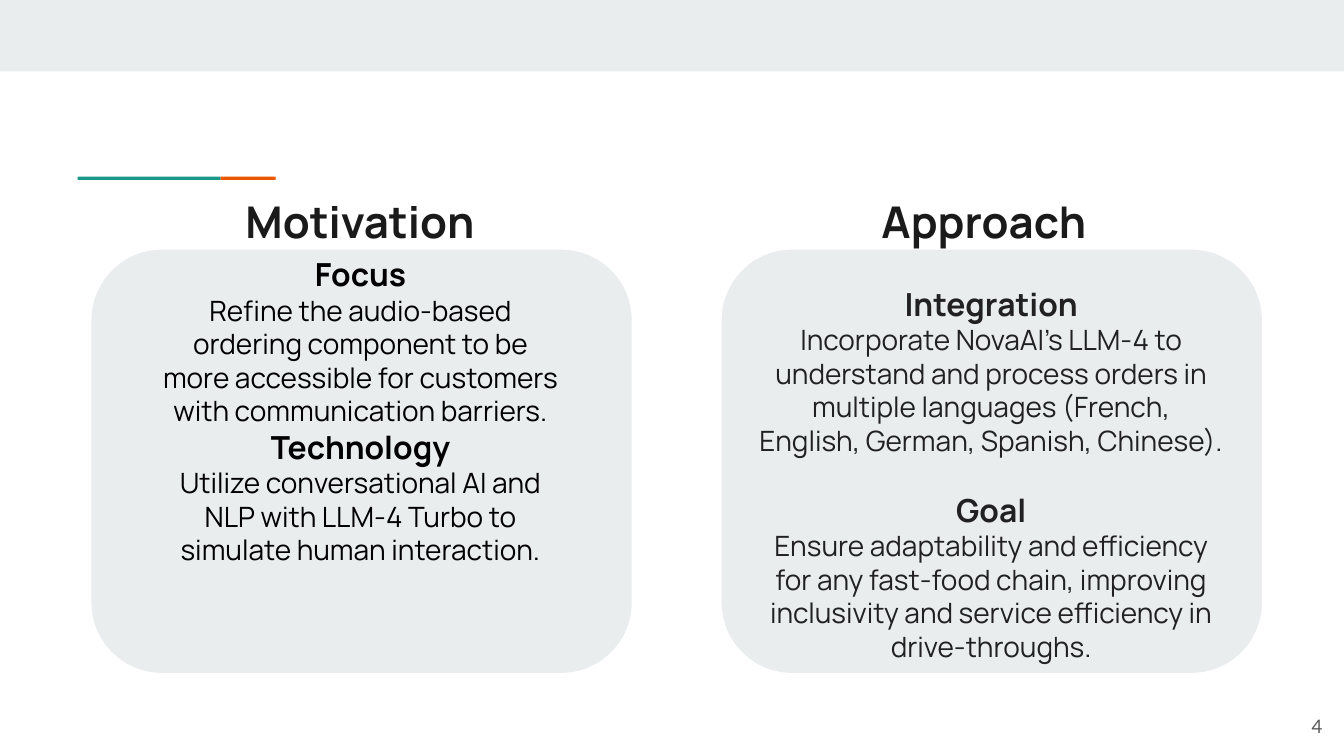
from pptx import Presentation
from pptx.dml.color import RGBColor
from pptx.enum.shapes import MSO_SHAPE as Preset
from pptx.enum.text import MSO_ANCHOR as Anchor, PP_ALIGN as Align
from pptx.util import Cm, Pt

COLORS = {
    "panel": "E9EDEE", "teal": "1A9988", "orange": "EB5600",
    "title": "1A1A1A", "black": "000000", "dark": "212121", "number": "595959",
}
SLIDE_WIDTH, SLIDE_HEIGHT = 25.4, 14.29
CARD_LEFT, CARD_TOP, CARD_WIDTH, CARD_HEIGHT = 1.73, 4.72, 10.21, 8.0
CARD_STEP = 11.91
TITLE_TOP, TITLE_HEIGHT = 3.43, 1.5

# Boxes are left, top, width, height in centimetres
COLUMNS = [
    {
        "title": "Motivation", "title_left": 4.39, "title_width": 4.88,
        "box": (2.79, 4.57, 8.05, 6.25), "color": "black", "gap": 0,
        "sections": [
            ("Focus",
             "Refine the audio-based ordering component to be more accessible "
             "for customers with communication barriers."),
            ("Technology",
             "Utilize conversational AI and NLP with LLM-4 Turbo to simulate "
             "human interaction."),
        ],
    },
    {
        "title": "Approach", "title_left": 16.41, "title_width": 4.65,
        "box": (14.1, 5.13, 9.27, 6.48), "color": "dark", "gap": 18,
        "sections": [
            ("Integration",
             "Incorporate NovaAI's LLM-4 to understand and process orders in "
             "multiple languages (French, English, German, Spanish, Chinese)."),
            ("Goal",
             "Ensure adaptability and efficiency for any fast-food chain, "
             "improving inclusivity and service efficiency in drive-throughs."),
        ],
    },
]
BARS = [
    ((0, 0, SLIDE_WIDTH, 1.35), "panel"),
    ((1.47, 3.34, 2.7, 0.06), "teal"),
    ((4.17, 3.34, 1.04, 0.06), "orange"),
]


def add_panel(slide, box, color, preset=Preset.RECTANGLE):
    shape = slide.shapes.add_shape(preset, *map(Cm, box))
    shape.shadow.inherit = False
    shape.fill.solid()
    shape.fill.fore_color.rgb = RGBColor.from_string(COLORS[color])
    shape.line.fill.background()


def add_text_frame(slide, box, anchor=Anchor.TOP):
    frame = slide.shapes.add_textbox(*map(Cm, box)).text_frame
    frame.word_wrap = True
    frame.vertical_anchor = anchor
    frame.margin_left = frame.margin_right = Cm(0.25)
    frame.margin_top = frame.margin_bottom = Cm(0.25)
    return frame


def write(frame, text, *, size, color, font="Manrope", bold=False,
          align=Align.LEFT, before=0):
    """Fill the first paragraph of the frame, or append one if it is used."""
    paragraph = frame.paragraphs[0]
    if paragraph.runs:
        paragraph = frame.add_paragraph()
    paragraph.alignment = align
    paragraph.space_before = Pt(before)
    run = paragraph.add_run()
    run.text = text
    run.font.name = font
    run.font.size = Pt(size)
    run.font.bold = bold
    run.font.color.rgb = RGBColor.from_string(COLORS[color])


def main():
    presentation = Presentation()
    presentation.slide_width = Cm(SLIDE_WIDTH)
    presentation.slide_height = Cm(SLIDE_HEIGHT)
    slide = presentation.slides.add_slide(presentation.slide_layouts[6])

    for box, color in BARS:
        add_panel(slide, box, color)

    for index, column in enumerate(COLUMNS):
        card = (CARD_LEFT + index * CARD_STEP, CARD_TOP, CARD_WIDTH, CARD_HEIGHT)
        add_panel(slide, card, "panel", Preset.FLOWCHART_ALTERNATE_PROCESS)

        title_box = (column["title_left"], TITLE_TOP, column["title_width"], TITLE_HEIGHT)
        write(add_text_frame(slide, title_box), column["title"],
              size=23.4, color="title", bold=True)

        body = add_text_frame(slide, column["box"])
        for number, (heading, text) in enumerate(column["sections"]):
            write(body, heading, size=17, color=column["color"], bold=True,
                  align=Align.CENTER, before=column["gap"] if number else 0)
            write(body, text, size=15, color=column["color"], align=Align.CENTER)

    number_frame = add_text_frame(slide, (23.72, 13.18, 1.52, 1.09), Anchor.MIDDLE)
    write(number_frame, "4", size=10, color="number", font="Lato", align=Align.RIGHT)

    presentation.save("out.pptx")


if __name__ == "__main__":
    main()
